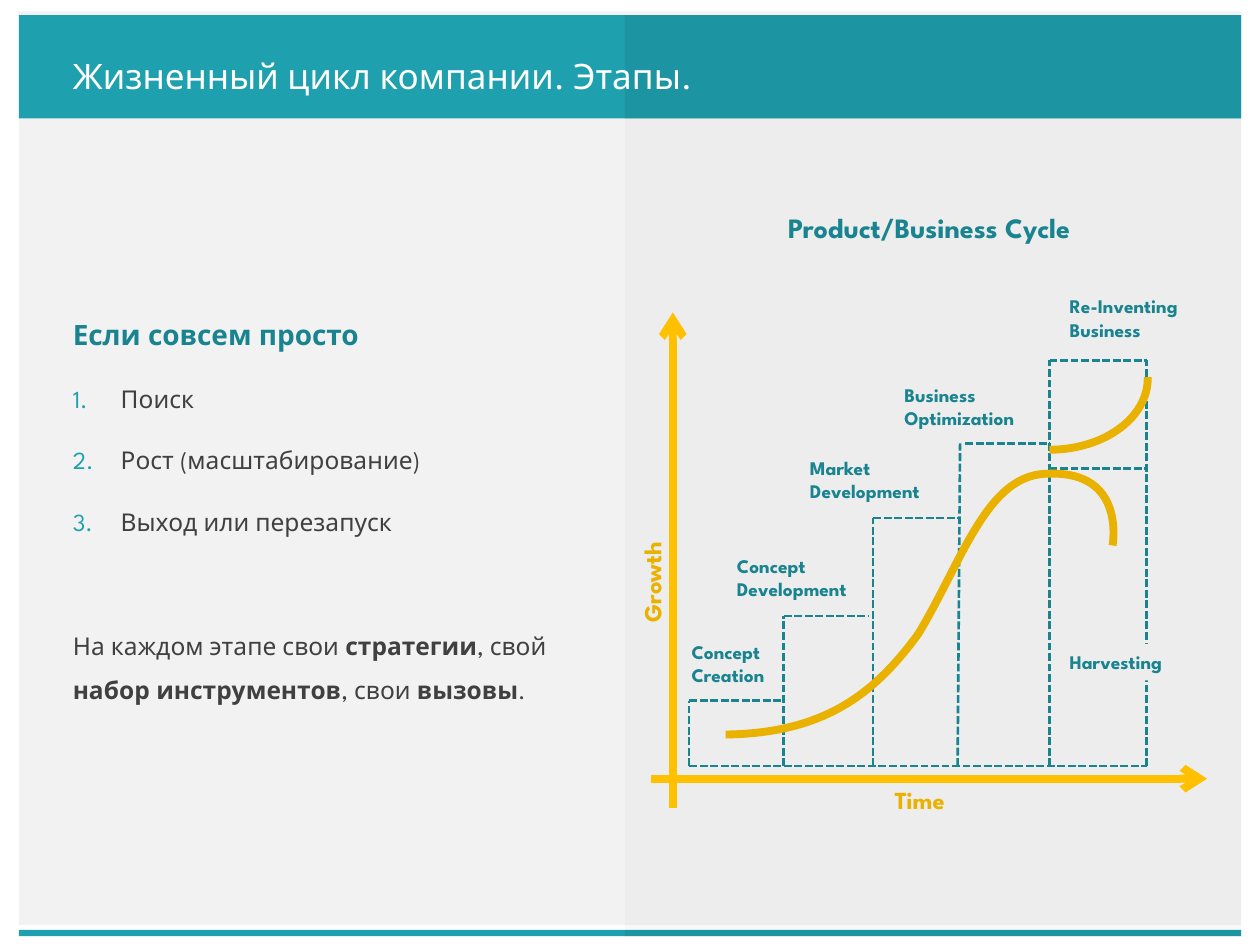
from dataclasses import dataclass

from lxml import etree
from pptx import Presentation
from pptx import util as u
from pptx.dml.color import RGBColor
from pptx.enum import dml, shapes, text
from pptx.oxml.ns import qn


@dataclass(frozen=True)
class Theme:
    font: str = "League Spartan"
    teal: str = "1FA0AE"
    dark_teal: str = "19848F"
    panel: str = "F2F2F2"
    shade: str = "D9D9D9"
    label_fill: str = "EDEDED"
    body: str = "404040"
    white: str = "FFFFFF"
    axis: str = "FFC000"
    curve: str = "EAB200"
    title_size: int = 20
    heading_size: int = 16
    body_size: int = 14
    label_size: int = 11
    thick: float = 4.5
    thin: float = 1.5


@dataclass(frozen=True)
class Box:
    left: float
    top: float
    width: float
    height: float

    def inner(self, left, top, width, height):
        return Box(self.left + left, self.top + top, width, height)

    def point(self, x, y):
        return u.Inches(self.left + x), u.Inches(self.top + y)

    def frame(self):
        return [u.Inches(n) for n in (self.left, self.top, self.width, self.height)]


THEME = Theme()


def color(value):
    return RGBColor.from_string(value)


def add_rect(parent, box, fill, alpha=None):
    rect = parent.shapes.add_shape(shapes.MSO_SHAPE.RECTANGLE, *box.frame())
    rect.shadow.inherit = False
    rect.line.fill.background()
    rect.fill.solid()
    rect.fill.fore_color.rgb = color(fill)
    if alpha is not None:
        tint = next(rect.fill._xPr.iter(qn("a:srgbClr")))
        etree.SubElement(tint, qn("a:alpha")).set("val", str(alpha * 1000))
    return rect


def add_span(para, words, size, ink, bold=False):
    span = para.add_run()
    span.text = words
    span.font.name = THEME.font
    span.font.size = u.Pt(size)
    span.font.bold = bold
    span.font.color.rgb = color(ink)


def add_label(parent, box, lines, size, ink, align=text.PP_ALIGN.LEFT, fill=None, wrap=False):
    if fill:
        label = add_rect(parent, box, fill)
    else:
        label = parent.shapes.add_textbox(*box.frame())
    frame = label.text_frame
    frame.word_wrap = wrap
    frame.auto_size = text.MSO_AUTO_SIZE.SHAPE_TO_FIT_TEXT
    frame.vertical_anchor = text.MSO_ANCHOR.TOP
    for index, line in enumerate(lines):
        para = frame.add_paragraph() if index else frame.paragraphs[0]
        para.alignment = align
        add_span(para, line, size, ink, bold=True)
    return label


def add_line(parent, start, end, ink, width, dashed=False, arrow=False):
    line = parent.shapes.add_connector(shapes.MSO_CONNECTOR.STRAIGHT, *start, *end)
    line.line.color.rgb = color(ink)
    line.line.width = u.Pt(width)
    if dashed:
        line.line.dash_style = dml.MSO_LINE.SQUARE_DOT
    if arrow:
        etree.SubElement(line.line._get_or_add_ln(), qn("a:tailEnd")).set("type", "arrow")
    etree.SubElement(line._element.spPr, qn("a:effectLst"))


def style_curve(curve):
    curve.shadow.inherit = False
    curve.fill.background()
    curve.line.color.rgb = color(THEME.curve)
    curve.line.width = u.Pt(THEME.thick)


def add_band(page, box, fill, shade, alpha, shade_drop=0):
    add_rect(page, box, fill)
    half = box.inner(4.81, shade_drop, box.width - 4.81, box.height)
    add_rect(page, half, shade, alpha)


def add_title(page, box):
    frame = page.shapes.add_textbox(*box.frame()).text_frame
    frame.word_wrap = True
    frame.vertical_anchor = text.MSO_ANCHOR.MIDDLE
    para = frame.paragraphs[0]
    para.line_spacing = u.Pt(32)
    add_span(para, "Жизненный цикл компании. Этапы.", THEME.title_size, THEME.white)


def number_paragraph(para):
    props = para._p.get_or_add_pPr()
    props.set("marL", str(u.Inches(0.38)))
    props.set("indent", str(-u.Inches(0.38)))
    bullet_color = etree.SubElement(props, qn("a:buClr"))
    etree.SubElement(bullet_color, qn("a:srgbClr")).set("val", THEME.teal)
    etree.SubElement(props, qn("a:buFont")).set("typeface", THEME.font)
    etree.SubElement(props, qn("a:buAutoNum")).set("type", "arabicPeriod")


def add_summary(page, box):
    frame = page.shapes.add_textbox(*box.frame()).text_frame
    frame.word_wrap = True

    def next_para(before=10):
        para = frame.add_paragraph() if frame.paragraphs[0].runs else frame.paragraphs[0]
        para.line_spacing = 1.5
        para.space_before = u.Pt(before)
        return para

    add_span(next_para(), "Если совсем просто", THEME.heading_size, THEME.dark_teal, bold=True)
    for stage in ("Поиск", "Рост (масштабирование)", "Выход или перезапуск"):
        para = next_para()
        number_paragraph(para)
        add_span(para, stage, THEME.body_size, THEME.body)
    closing = next_para(before=46)
    spans = ("На каждом этапе свои ", "стратегии", ", свой ", "набор инструментов",
             ", свои ", "вызовы", ".")
    for index, words in enumerate(spans):
        add_span(closing, words, THEME.body_size, THEME.body, bold=index % 2 == 1)


def add_axes(parent, box):
    add_line(parent, box.point(0.17, 4.68), box.point(4.58, 4.68), THEME.axis, THEME.thick, arrow=True)
    add_line(parent, box.point(0.34, 4.91), box.point(0.34, 0.98), THEME.axis, THEME.thick, arrow=True)
    center = text.PP_ALIGN.CENTER
    add_label(parent, box.inner(1.98, 4.68, 0.64, 0.34), ["Time"], THEME.body_size, THEME.curve, center)
    growth = add_label(parent, box.inner(-0.27, 2.95, 0.89, 0.34), ["Growth"],
                       THEME.body_size, THEME.curve, center)
    growth.rotation = 270


def add_stairs(parent, box):
    base = 4.58
    walls = [(0.47, 0.47, 4.06), (1.22, 1.22, 3.39), (1.93, 1.93, 2.61),
             (2.6, 2.62, 2.02), (3.33, 3.33, 1.36), (4.1, 4.1, 1.36)]
    treads = [(0.47, 1.22, 4.06), (1.22, 1.9, 3.39), (1.93, 2.6, 2.61), (2.66, 3.33, 2.02),
              (3.33, 4.1, 1.36), (3.33, 4.1, 2.22), (0.47, 4.1, base)]
    edges = [((foot, base), (head, top)) for foot, head, top in walls]
    edges += [((left, y), (right, y)) for left, right, y in treads]
    for start, end in edges:
        add_line(parent, box.point(*start), box.point(*end), THEME.dark_teal, THEME.thin, dashed=True)


def add_stage_labels(parent, box):
    stages = [
        ((3.39, 3.61, 0.99, 0.29), ["Harvesting"], THEME.label_fill),
        ((3.39, 0.79, 1.15, 0.47), ["Re-Inventing", "Business"], THEME.label_fill),
        ((0.39, 3.53, 0.86, 0.47), ["Concept", "Creation"], None),
        ((0.75, 2.85, 1.21, 0.47), ["Concept", "Development"], None),
        ((1.33, 2.07, 1.21, 0.47), ["Market", "Development"], None),
        ((2.08, 1.49, 1.14, 0.47), ["Business", "Optimization"], None),
    ]
    for place, lines, fill in stages:
        add_label(parent, box.inner(*place), lines, THEME.label_size, THEME.dark_teal, fill=fill)


def add_growth_curves(parent, box):
    renewal = parent.shapes.add_shape(shapes.MSO_SHAPE.ARC, *box.inner(2.55, 0.94, 1.56, 1.13).frame())
    renewal.adjustments[0] = 162
    renewal.adjustments[1] = 0.484
    renewal._element.spPr.xfrm.set("flipV", "1")
    style_curve(renewal)

    start = box.point(0.76, 4.33)
    bends = [[box.point(*spot) for spot in bend] for bend in (
        ((1.54, 4.32), (1.94, 4.01), (2.29, 3.53)),
        ((2.65, 2.93), (2.84, 2.25), (3.33, 2.26)),
        ((3.94, 2.24), (3.83, 2.83), (3.83, 2.83)),
    )]
    builder = parent.shapes.build_freeform(*start)
    builder.add_line_segments([bend[-1] for bend in bends], close=False)
    curve = builder.convert_to_shape()
    for segment, bend in zip(list(curve._element.iter(qn("a:lnTo"))), bends):
        segment.tag = qn("a:cubicBezTo")
        segment.remove(segment[0])
        for x, y in bend:
            spot = etree.SubElement(segment, qn("a:pt"))
            spot.set("x", str(x - curve.left))
            spot.set("y", str(y - curve.top))
    style_curve(curve)


def add_cycle_diagram(page, box):
    diagram = page.shapes.add_group_shape()
    for add_part in (add_axes, add_stairs, add_stage_labels):
        add_part(diagram, box)
    add_label(diagram, box.inner(0.91, 0.12, 2.93, 0.37), ["Product/Business Cycle"],
              THEME.heading_size, THEME.dark_teal, text.PP_ALIGN.CENTER, wrap=True)
    add_growth_curves(diagram, box)


def main():
    deck = Presentation()
    deck.slide_width, deck.slide_height = u.Inches(10), u.Inches(7.5)
    page = deck.slides.add_slide(deck.slide_layouts[6])
    add_band(page, Box(0.15, 0.09, 9.7, 7.25), THEME.panel, THEME.shade, 18, shade_drop=0.03)
    add_band(page, Box(0.15, 0.12, 9.7, 0.82), THEME.teal, THEME.dark_teal, 41)
    add_band(page, Box(0.15, 7.38, 9.7, 0.05), THEME.teal, THEME.dark_teal, 41)
    add_title(page, Box(0.48, 0.29, 8.62, 0.5))
    add_summary(page, Box(0.48, 2.34, 4.27, 4.74))
    add_cycle_diagram(page, Box(5, 1.5, 4.7, 5))
    deck.save("out.pptx")


if __name__ == "__main__":
    main()
